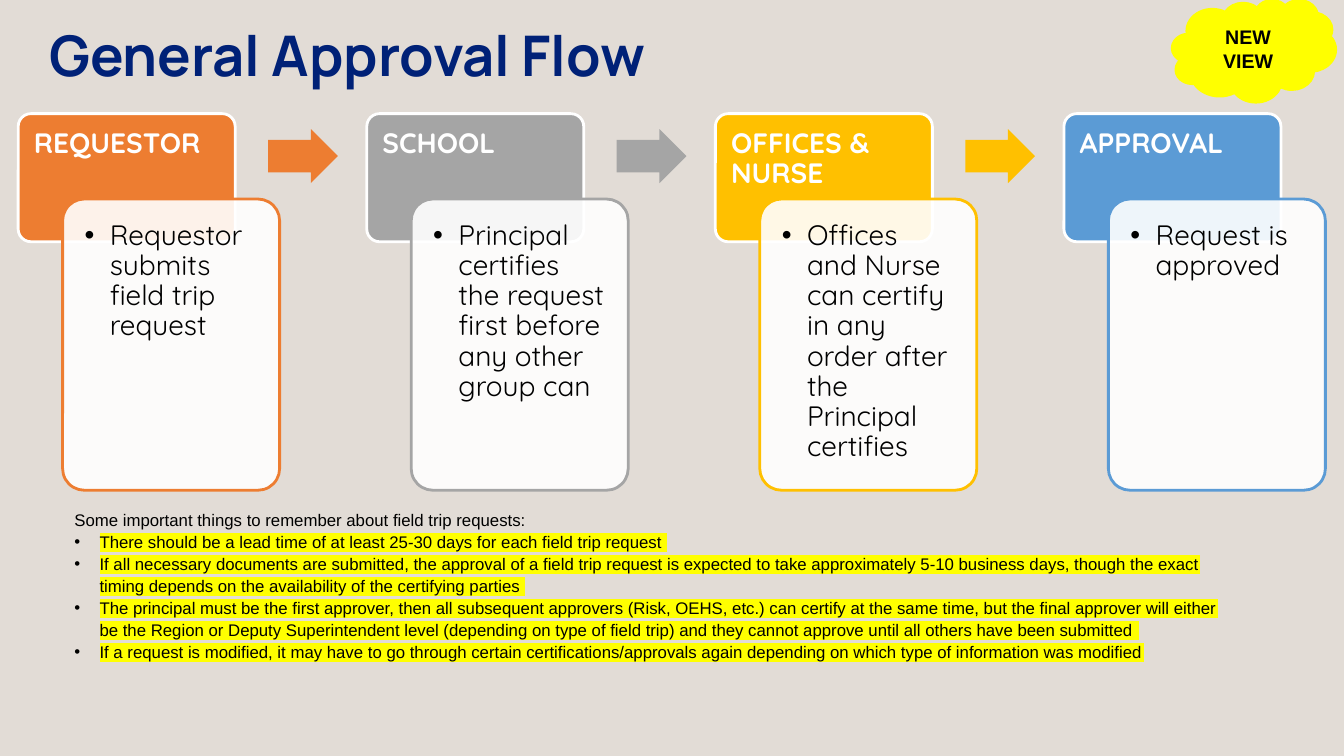
from dataclasses import dataclass

import pptx
import pptx.dml.color
import pptx.enum.shapes
import pptx.enum.text
import pptx.oxml
import pptx.oxml.ns
import pptx.util
from lxml import etree

Pt = pptx.util.Pt
RGBColor = pptx.dml.color.RGBColor
Shape = pptx.enum.shapes.MSO_SHAPE
Align = pptx.enum.text.PP_ALIGN
Anchor = pptx.enum.text.MSO_ANCHOR
qn = pptx.oxml.ns.qn

BACKGROUND = RGBColor(0xE2, 0xDC, 0xD6)
NAVY = RGBColor(0x00, 0x21, 0x77)
YELLOW = RGBColor(0xFF, 0xFF, 0x00)
BLACK = RGBColor(0x00, 0x00, 0x00)
WHITE = RGBColor(0xFF, 0xFF, 0xFF)
ORANGE = RGBColor(0xED, 0x7D, 0x31)
GRAY = RGBColor(0xA5, 0xA5, 0xA5)
GOLD = RGBColor(0xFF, 0xC0, 0x00)
BLUE = RGBColor(0x5B, 0x9B, 0xD5)

STEP_LEFT = 13
STEP_PITCH = 249
CARD_WIDTH = 155
BULLET_INDENT = 18


@dataclass(frozen=True)
class Area:
    left: float
    top: float
    width: float
    height: float

    def points(self) -> tuple:
        return Pt(self.left), Pt(self.top), Pt(self.width), Pt(self.height)


@dataclass(frozen=True)
class TextStyle:
    font: str
    size: float
    color: RGBColor
    bold: bool = False


@dataclass(frozen=True)
class Step:
    heading: str
    detail: str
    color: RGBColor


TITLE = TextStyle("Manrope", 40, NAVY, True)
BADGE = TextStyle("Arial", 14, BLACK, True)
NOTE = TextStyle("Arial", 12, BLACK)
HEADING = TextStyle("Quicksand", 20, WHITE, True)
DETAIL = TextStyle("Quicksand", 20, BLACK)

STEPS = [
    Step("REQUESTOR", "Requestor submits field trip request", ORANGE),
    Step("SCHOOL", "Principal certifies the request first before any other group can", GRAY),
    Step("OFFICES & NURSE", "Offices and Nurse can certify in any order after the Principal certifies", GOLD),
    Step("APPROVAL", "Request is approved", BLUE),
]

REMINDER_INTRO = "Some important things to remember about field trip requests:"
REMINDERS = [
    "There should be a lead time of at least 25-30 days for each field trip request ",
    "If all necessary documents are submitted, the approval of a field trip request is expected to take "
    "approximately 5-10 business days, though the exact timing depends on the availability of the "
    "certifying parties ",
    "The principal must be the first approver, then all subsequent approvers (Risk, OEHS, etc.) can certify "
    "at the same time, but the final approver will either be the Region or Deputy Superintendent level "
    "(depending on type of field trip) and they cannot approve until all others have been submitted ",
    "If a request is modified, it may have to go through certain certifications/approvals again depending "
    "on which type of information was modified",
]


def write(para, text: str, style: TextStyle) -> None:
    para.text = text
    for span in para.runs:
        span.font.name = style.font
        span.font.size = Pt(style.size)
        span.font.bold = style.bold
        span.font.color.rgb = style.color


def add_bullet(para) -> None:
    properties = para._p.get_or_add_pPr()
    properties.set("marL", str(Pt(BULLET_INDENT)))
    properties.set("indent", str(-Pt(BULLET_INDENT)))
    color = etree.SubElement(properties, qn("a:buClr"))
    etree.SubElement(color, qn("a:srgbClr"), val=str(BLACK))
    etree.SubElement(properties, qn("a:buFont"), typeface="Arial")
    etree.SubElement(properties, qn("a:buChar"), char="•")


def highlight(para, color: RGBColor) -> None:
    for span in para.runs:
        mark = etree.Element(qn("a:highlight"))
        etree.SubElement(mark, qn("a:srgbClr"), val=str(color))
        span.font._element.find(qn("a:solidFill")).addnext(mark)


def add_box(page, area: Area, insets: tuple = (7.2, 3.6, 7.2, 3.6)):
    """Add a wrapping text box; insets are left, top, right, bottom."""
    frame = page.shapes.add_textbox(*area.points()).text_frame
    frame.word_wrap = True
    frame.margin_left, frame.margin_top, frame.margin_right, frame.margin_bottom = map(Pt, insets)
    return frame


def add_filled(page, kind, area: Area, fill: RGBColor, line: RGBColor | None = None,
               adjustments: tuple = ()):
    shape = page.shapes.add_shape(kind, *area.points())
    shape.shadow.inherit = False
    shape.fill.solid()
    shape.fill.fore_color.rgb = fill
    if line is None:
        shape.line.fill.background()
    else:
        shape.line.color.rgb = line
        shape.line.width = Pt(2)
    for index, value in enumerate(adjustments):
        shape.adjustments[index] = value
    return shape


def set_opacity(shape, percent: int) -> None:
    color = shape._element.spPr.find(qn("a:solidFill"))[0]
    etree.SubElement(color, qn("a:alpha"), val=str(percent * 1000))


def draw_step(page, step: Step, left: float) -> None:
    add_filled(page, Shape.ROUNDED_RECTANGLE, Area(left, 81.2, CARD_WIDTH, 91.5),
               step.color, WHITE, (0.1,))
    heading = add_box(page, Area(left, 81.2, CARD_WIDTH, 61), (11.2, 11.2, 11.2, 6)).paragraphs[0]
    heading.line_spacing = 0.9
    write(heading, step.heading, HEADING)

    card = add_filled(page, Shape.ROUNDED_RECTANGLE, Area(left + 31.75, 142.2, CARD_WIDTH, 208),
                      WHITE, step.color, (0.1,))
    set_opacity(card, 90)
    detail = add_box(page, Area(left + 36.25, 146.7, 146, 199), (11.2,) * 4).paragraphs[0]
    detail.line_spacing = 0.9
    add_bullet(detail)
    write(detail, step.detail, DETAIL)


def draw_reminders(page) -> None:
    frame = add_box(page, Area(46, 359.3, 834.5, 135.4))
    for index, text in enumerate([REMINDER_INTRO, *REMINDERS]):
        para = frame.add_paragraph() if index else frame.paragraphs[0]
        para.line_spacing = Pt(15.7)
        write(para, text, NOTE)
        if index:
            add_bullet(para)
            highlight(para, YELLOW)


def main() -> None:
    deck = pptx.Presentation()
    deck.slide_width, deck.slide_height = Pt(960), Pt(540)
    page = deck.slides.add_slide(deck.slide_layouts[6])
    page.background.fill.solid()
    page.background.fill.fore_color.rgb = BACKGROUND

    write(add_box(page, Area(28, 10.8, 843, 55.4)).paragraphs[0], "General Approval Flow", TITLE)

    badge = add_filled(page, Shape.CLOUD, Area(837.4, 0, 116.6, 72.7), YELLOW, YELLOW).text_frame
    badge.word_wrap = True
    badge.vertical_anchor = Anchor.MIDDLE
    badge.paragraphs[0].alignment = Align.CENTER
    write(badge.paragraphs[0], "NEW VIEW", BADGE)

    draw_reminders(page)
    for index, step in enumerate(STEPS):
        left = STEP_LEFT + index * STEP_PITCH
        draw_step(page, step, left)
        if index < len(STEPS) - 1:
            add_filled(page, Shape.RIGHT_ARROW, Area(left + 178.5, 92.2, 49.8, 38.6),
                       step.color, adjustments=(0.6, 0.5))

    deck.save("out.pptx")


if __name__ == "__main__":
    main()
